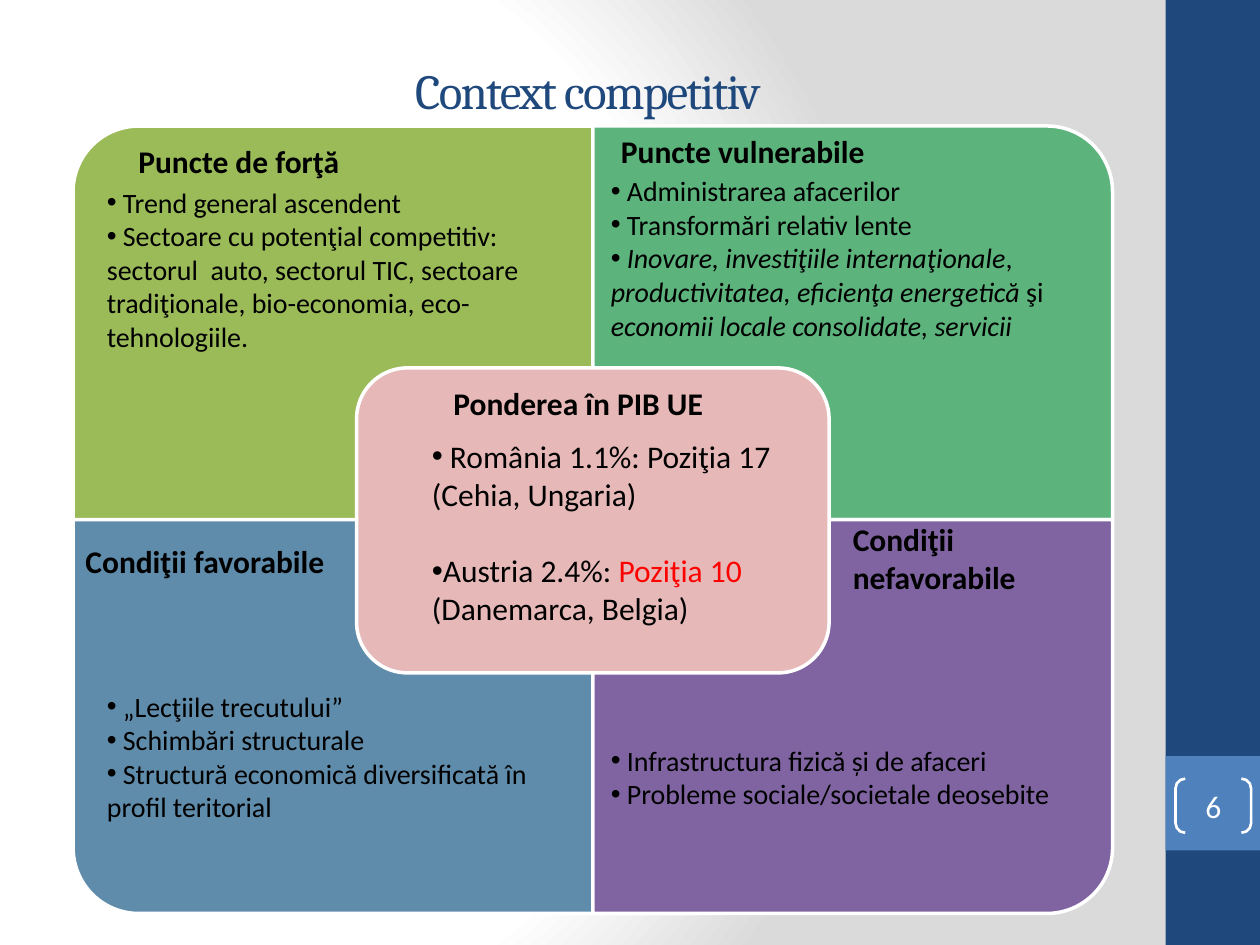
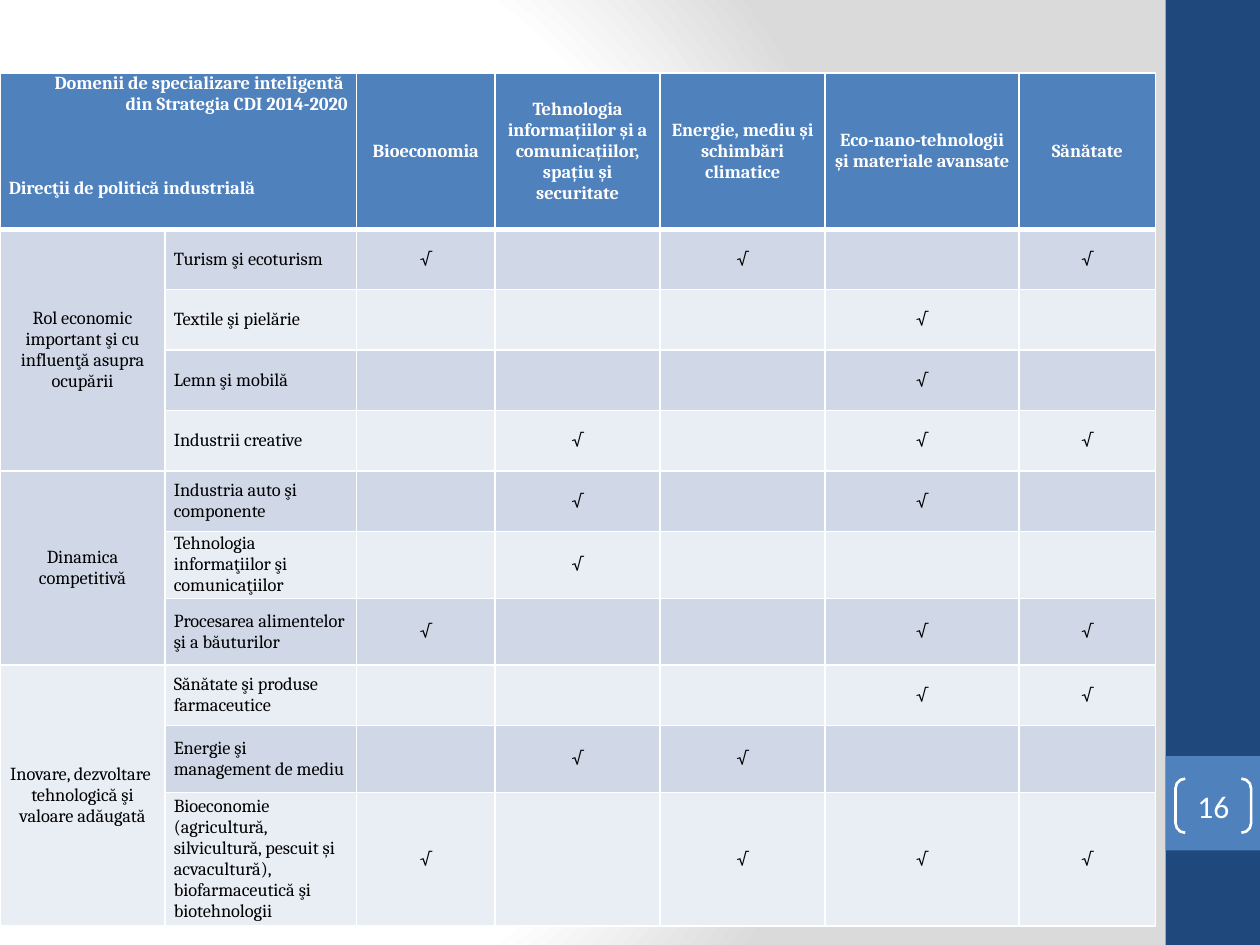
from lxml import etree
from pptx import Presentation
from pptx import util as u
from pptx.dml.color import RGBColor
from pptx.enum import shapes, text
from pptx.oxml import parse_xml
from pptx.oxml.ns import nsdecls, qn

# Shared colours and fonts
NAVY = RGBColor(0x1F, 0x49, 0x7D)
BLUE = RGBColor(0x4F, 0x81, 0xBD)
WHITE = RGBColor(0xFF, 0xFF, 0xFF)
BLACK = RGBColor(0, 0, 0)
RED = RGBColor(0xFF, 0, 0)
GREEN = RGBColor(0x9B, 0xBB, 0x59)
TEAL = RGBColor(0x5C, 0xB3, 0x7C)
STEEL = RGBColor(0x60, 0x8C, 0xAB)
PURPLE = RGBColor(0x80, 0x64, 0xA2)
PINK = RGBColor(0xE6, 0xB9, 0xB8)
BAND_DARK = RGBColor(0xD0, 0xD8, 0xE8)
BAND_LIGHT = RGBColor(0xE9, 0xED, 0xF4)
HEAD_FONT, BODY_FONT = "Cambria", "Calibri"

# Grid of the four quadrants, in inches
GRID_X, GRID_Y, QUAD_W, QUAD_H = 0.58, 1.0, 4.125, 3.125

MSO = shapes.MSO_SHAPE
ALIGN = text.PP_ALIGN
MIDDLE = text.MSO_ANCHOR.MIDDLE

BACKGROUND = f"""<a:gradFill {nsdecls('a')} rotWithShape="1"><a:gsLst>
<a:gs pos="0"><a:srgbClr val="FFFFFF"/></a:gs>
<a:gs pos="75000"><a:srgbClr val="FFFFFF"/></a:gs>
<a:gs pos="100000"><a:srgbClr val="DADADA"/></a:gs></a:gsLst>
<a:path path="circle"><a:fillToRect l="20000" t="50000" r="100000" b="50000"/></a:path>
</a:gradFill>"""

# Slide 2: header labels, then groups of (direction, ticked domains)
DOMAINS = ["Bioeconomia",
           "Tehnologia informațiilor și a comunicațiilor, spațiu și securitate",
           "Energie, mediu și schimbări climatice",
           "Eco-nano-tehnologii și materiale avansate",
           "Sănătate"]
GROUPS = [
    ("Rol economic important şi cu influenţă asupra ocupării", BAND_DARK, [
        ("Turism şi ecoturism", (0, 2, 4)),
        ("Textile şi pielărie", (3,)),
        ("Lemn şi mobilă", (3,)),
        ("Industrii creative", (1, 3, 4))]),
    ("Dinamica competitivă", BAND_DARK, [
        ("Industria auto şi componente", (1, 3)),
        ("Tehnologia informaţiilor şi comunicaţiilor", (1,)),
        ("Procesarea alimentelor şi a băuturilor", (0, 3, 4))]),
    ("Inovare, dezvoltare  tehnologică şi valoare adăugată", BAND_LIGHT, [
        ("Sănătate şi produse farmaceutice", (3, 4)),
        ("Energie şi management de mediu", (1, 2)),
        ("Bioeconomie (agricultură, silvicultură, pescuit și acvacultură), "
         "biofarmaceutică şi biotehnologii", (0, 2, 3, 4))]),
]
COL_WIDTHS = [1.31, 1.52, 1.1, 1.31, 1.31, 1.54, 1.08]
ROW_HEIGHTS = [1.24] + [0.48] * 5 + [0.53, 0.53, 0.48, 0.53, 1.06]


def write(tf, paragraphs, size=18, font=BODY_FONT, color=BLACK, bold=False,
          align=ALIGN.LEFT, bullet=False, last_gap=0):
    """Fill a text frame; a paragraph is a string or a list of runs (text, format)."""
    tf.word_wrap = True
    for i, runs in enumerate(paragraphs):
        p = tf.paragraphs[0] if i == 0 else tf.add_paragraph()
        if bullet:
            pPr = p._p.get_or_add_pPr()
            pPr.set("marL", "0")
            pPr.set("indent", "0")
            etree.SubElement(pPr, qn("a:buFont")).set("typeface", "Arial")
            etree.SubElement(pPr, qn("a:buChar")).set("char", "•")
        p.alignment = align
        if last_gap and i and i == len(paragraphs) - 1:
            p.space_before = u.Pt(last_gap)
        for words, fmt in [(runs, {})] if isinstance(runs, str) else runs:
            r = p.add_run()
            r.text = words
            r.font.name, r.font.size = font, u.Pt(size)
            r.font.bold = bold
            r.font.italic = fmt.get("italic", False)
            r.font.color.rgb = fmt.get("color", color)


def add_shape(slide, kind, x, y, w, h, fill=None, line=None, rotation=0):
    sp = slide.shapes.add_shape(kind, *map(u.Inches, (x, y, w, h)))
    sp.shadow.inherit = False
    sp.rotation = rotation
    if fill is None:
        sp.fill.background()
    else:
        sp.fill.solid()
        sp.fill.fore_color.rgb = fill
    if line is None:
        sp.line.fill.background()
    else:
        sp.line.color.rgb = WHITE
        sp.line.width = u.Pt(line)
    return sp


def add_text(slide, x, y, w, h, paragraphs, **fmt):
    box = slide.shapes.add_textbox(*map(u.Inches, (x, y, w, h)))
    write(box.text_frame, paragraphs, **fmt)


def add_quadrant(slide, col, row, fill, rotation):
    """A grid cell whose single rounded corner is turned outwards."""
    w, h = (QUAD_H, QUAD_W) if rotation % 180 else (QUAD_W, QUAD_H)
    x = GRID_X + (col + 0.5) * QUAD_W - w / 2
    y = GRID_Y + (row + 0.5) * QUAD_H - h / 2
    add_shape(slide, MSO.ROUND_1_RECTANGLE, x, y, w, h, fill, 2, rotation)


def add_page_number(slide, number):
    sp = add_shape(slide, MSO.DOUBLE_BRACKET, 9.33, 6.18, 0.6, 0.43, line=1.5)
    sp.adjustments[0] = 0.179
    tf = sp.text_frame
    tf.margin_left = tf.margin_right = tf.margin_top = tf.margin_bottom = 0
    tf.vertical_anchor = MIDDLE
    write(tf, [str(number)], color=WHITE, align=ALIGN.CENTER)


def dress_master(prs, slide):
    """Put the background and the side band on the master."""
    master = prs.slide_master
    master.background.fill.solid()
    bg = master.element.find(".//" + qn("p:bgPr"))
    bg.replace(bg[0], parse_xml(BACKGROUND))
    bands = [(0, 7.5, NAVY), (6, 0.75, BLUE)]
    for i, (y, h, fill) in enumerate(bands):
        sp = add_shape(slide, MSO.RECTANGLE, 9.25, y, 0.75, h, fill)
        sp.element.nvSpPr.cNvPr.set("id", str(101 + i))
        master.shapes.element.insert(2 + i, sp.element)


def add_title(slide, words):
    title = slide.shapes.title
    title.left, title.top, title.width, title.height = map(
        u.Inches, (0.5, 0.5, 8.33, 0.42))
    tf = title.text_frame
    tf.auto_size = text.MSO_AUTO_SIZE.NONE
    tf.vertical_anchor = MIDDLE
    write(tf, [words], size=28, font=HEAD_FONT, color=NAVY, align=ALIGN.CENTER)
    tf.paragraphs[0].runs[0].font._element.set("spc", "-100")


def build_context(slide):
    add_title(slide, "Context competitiv")

    # Quadrants and centre
    add_quadrant(slide, 0, 0, GREEN, 270)
    add_quadrant(slide, 1, 0, TEAL, 0)
    add_quadrant(slide, 0, 1, STEEL, 180)
    add_quadrant(slide, 1, 1, PURPLE, 90)
    add_shape(slide, MSO.ROUNDED_RECTANGLE, 2.83, 2.92, 3.75, 2.42, PINK, 2)

    # Headings
    for x, y, w, h, words in [
            (1, 1.08, 3.17, 0.4, "Puncte de forţă"),
            (0.58, 4.25, 2.67, 0.4, "Condiţii favorabile"),
            (4.83, 1, 3.5, 0.4, "Puncte vulnerabile"),
            (6.67, 4.08, 2.17, 0.71, "Condiţii nefavorabile"),
            (3.5, 3, 2.5, 0.4, "Ponderea în PIB UE")]:
        add_text(slide, x, y, w, h, [words], bold=True)

    # Lists
    it = {"italic": True}
    for x, y, w, h, items in [
            (0.75, 1.42, 3.83, 2.52, [
                " Trend general ascendent",
                " Sectoare cu potenţial competitiv: sectorul  auto, sectorul TIC, "
                "sectoare tradiţionale, bio-economia, eco-tehnologiile."]),
            (4.75, 1.33, 4.33, 1.75, [
                " Administrarea afacerilor",
                " Transformări relativ lente",
                [(" Inovare, investiţiile internaţionale", it), (", ", {}),
                 ("productivitatea, eficienţa energetică", it), (" şi ", {}),
                 ("economii locale consolidate, servicii", it)]]),
            (0.75, 5.42, 3.92, 1.18, [
                " „Lecţiile trecutului”",
                " Schimbări structurale",
                " Structură economică diversificată în profil teritorial"]),
            (4.75, 5.85, 4.17, 0.67, [
                " Infrastructura fizică și de afaceri",
                " Probleme sociale/societale deosebite"])]:
        add_text(slide, x, y, w, h, items, size=16, bullet=True)
    add_text(slide, 3.33, 3.42, 3, 1.62, [
        " România 1.1%: Poziţia 17 (Cehia, Ungaria)",
        [("Austria 2.4%: ", {}), ("Poziţia 10 ", {"color": RED}),
         ("(Danemarca, Belgia)", {})]], bullet=True, last_gap=22)


def style_cell(cell, fill, top=1, bottom=1):
    cell.margin_left = cell.margin_right = u.Inches(0.07)
    cell.margin_top = cell.margin_bottom = 0
    cell.vertical_anchor = MIDDLE
    cell.fill.solid()
    cell.fill.fore_color.rgb = fill
    tcPr = cell._tc.get_or_add_tcPr()
    for i, (side, width) in enumerate(zip("LRTB", (1, 1, top, bottom))):
        tcPr.insert(i, parse_xml(
            f'<a:ln{side} {nsdecls("a")} w="{u.Pt(width)}"><a:solidFill>'
            f'<a:srgbClr val="{WHITE}"/></a:solidFill></a:ln{side}>'))


def fill_cell(cell, *paragraphs, **fmt):
    fmt = {"align": ALIGN.CENTER, **fmt}
    write(cell.text_frame, paragraphs, size=10.5, font=HEAD_FONT, **fmt)


def build_matrix(slide):
    table = slide.shapes.add_table(
        len(ROW_HEIGHTS), len(COL_WIDTHS), 0, u.Inches(0.58),
        u.Inches(sum(COL_WIDTHS)), u.Inches(sum(ROW_HEIGHTS))).table
    for col, width in zip(table.columns, COL_WIDTHS):
        col.width = u.Inches(width)
    for row, height in zip(table.rows, ROW_HEIGHTS):
        row.height = u.Inches(height)

    # Bands: header, then alternating rows
    for i, row in enumerate(table.rows):
        fill = BLUE if i == 0 else BAND_DARK if i % 2 else BAND_LIGHT
        for cell in row.cells:
            style_cell(cell, fill, top=3 if i == 1 else 1, bottom=1 if i else 3)

    # Header
    corner = table.cell(0, 0)
    corner.merge(table.cell(0, 1))
    corner.vertical_anchor = text.MSO_ANCHOR.TOP
    fill_cell(corner, "Domenii de specializare inteligentă ",
              "din Strategia CDI 2014-2020", "Direcţii de politică industrială",
              color=WHITE, bold=True, align=ALIGN.RIGHT, last_gap=36)
    corner.text_frame.paragraphs[-1].alignment = ALIGN.LEFT
    for col, domain in enumerate(DOMAINS, 2):
        fill_cell(table.cell(0, col), domain, color=WHITE, bold=True)

    # Groups of directions with their ticks
    row = 1
    for group, fill, directions in GROUPS:
        head = table.cell(row, 0)
        head.merge(table.cell(row + len(directions) - 1, 0))
        head.fill.fore_color.rgb = fill
        fill_cell(head, group)
        for direction, ticks in directions:
            fill_cell(table.cell(row, 1), direction, align=ALIGN.LEFT)
            for tick in ticks:
                fill_cell(table.cell(row, tick + 2), "√")
            row += 1


def main():
    prs = Presentation()
    prs.slide_width, prs.slide_height = u.Inches(10), u.Inches(7.5)
    title_only, blank = prs.slide_layouts[5], prs.slide_layouts[6]

    context = prs.slides.add_slide(title_only)
    dress_master(prs, context)
    build_context(context)
    add_page_number(context, 6)

    matrix = prs.slides.add_slide(blank)
    build_matrix(matrix)
    add_page_number(matrix, 16)

    prs.save("out.pptx")


if __name__ == "__main__":
    main()
